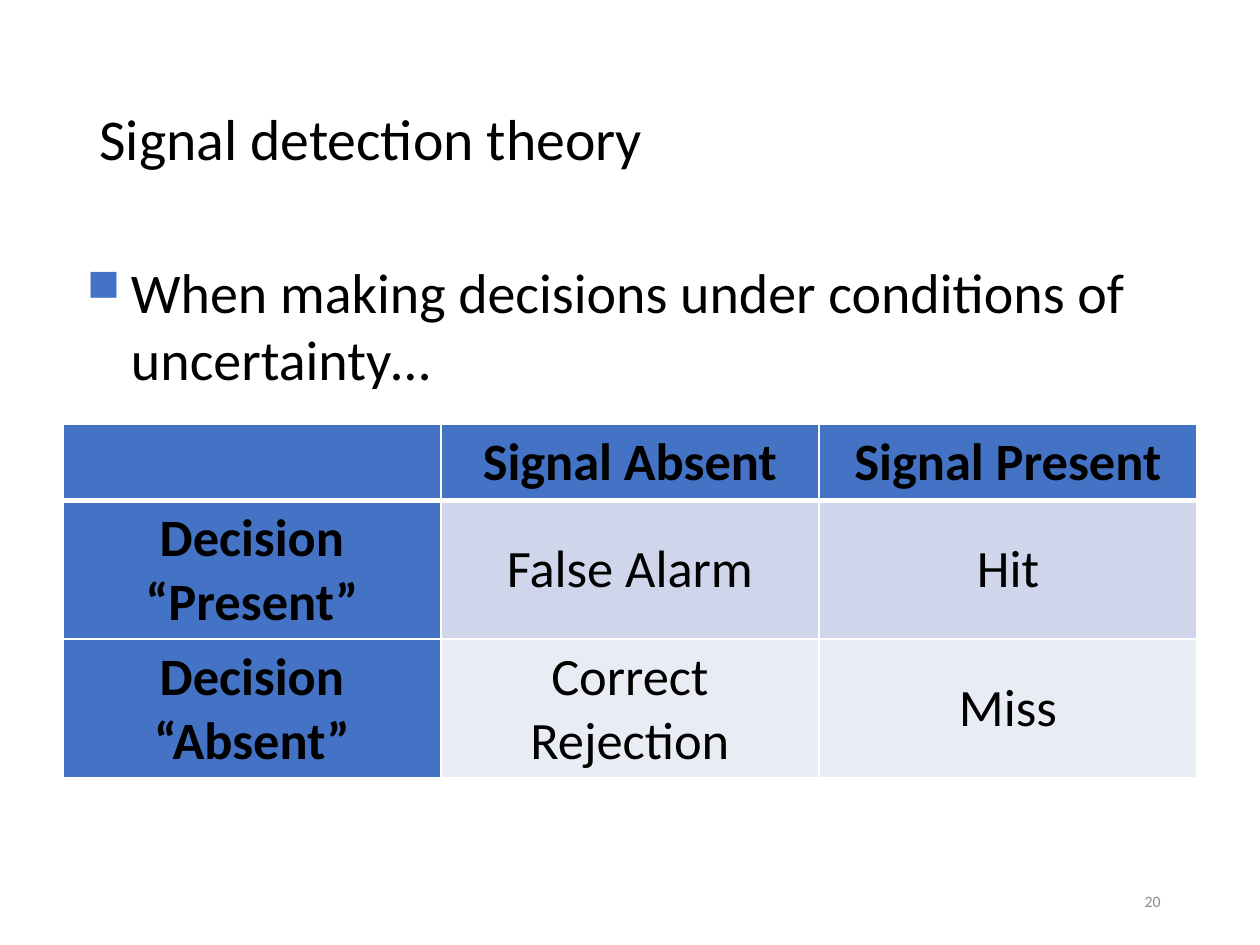
import pptx
import pptx.util
import pptx.dml.color
import pptx.enum.text
import pptx.oxml
import pptx.oxml.ns
from lxml import etree

Inches = pptx.util.Inches
Align = pptx.enum.text.PP_ALIGN
Anchor = pptx.enum.text.MSO_ANCHOR
qn = pptx.oxml.ns.qn

BLUE = "4472C4"
BANDS = ["CFD5EA", "E9EBF5"]
ROWS = [
    ["", "Signal Absent", "Signal Present"],
    ["Decision “Present”", "False Alarm", "Hit"],
    ["Decision “Absent”", "Correct Rejection", "Miss"],
]


def color(code):
    return pptx.dml.color.RGBColor.from_string(code)


def style(para, size, code="000000", bold=False, align=Align.LEFT):
    para.alignment = align
    font = para.font
    font.name = "Calibri"
    font.size = pptx.util.Pt(size)
    font.bold = bold
    font.color.rgb = color(code)


def add_text(slide, box, text, size, anchor=Anchor.MIDDLE, **look):
    frame = slide.shapes.add_textbox(*map(Inches, box)).text_frame
    frame.word_wrap = True
    frame.vertical_anchor = anchor
    para = frame.paragraphs[0]
    para.text = text
    style(para, size, **look)
    return frame


def add_bullet(para, mark, code, scale, left, hang):
    props = para._p.get_or_add_pPr()
    props.set("marL", str(Inches(left)))
    props.set("indent", str(Inches(-hang)))
    # Bullet settings come ahead of the default font
    parts = [
        f'<a:buClr {pptx.oxml.ns.nsdecls("a")}><a:srgbClr val="{code}"/></a:buClr>',
        f'<a:buSzPct {pptx.oxml.ns.nsdecls("a")} val="{scale * 1000}"/>',
        f'<a:buChar {pptx.oxml.ns.nsdecls("a")} char="{mark}"/>',
    ]
    for spot, part in enumerate(parts):
        props.insert(spot, pptx.oxml.parse_xml(part))


def add_edge(cell, side, width):
    props = cell._tc.get_or_add_tcPr()
    line = etree.SubElement(props, qn(f"a:ln{side}"), w=str(pptx.util.Pt(width)))
    fill = etree.SubElement(line, qn("a:solidFill"))
    etree.SubElement(fill, qn("a:srgbClr"), val="FFFFFF")


def add_grid(slide, box, rows, heights):
    shape = slide.shapes.add_table(len(rows), len(rows[0]), *map(Inches, box))
    table = shape.table
    for r, row in enumerate(rows):
        table.rows[r].height = Inches(heights[r])
        for c, text in enumerate(row):
            cell = table.cell(r, c)
            head = r == 0 or c == 0
            cell.text = text
            cell.vertical_anchor = Anchor.MIDDLE
            style(cell.text_frame.paragraphs[0], 30, bold=head, align=Align.CENTER)
            # A thick rule parts the header from the body
            for side in "LRTB":
                thick = (r, side) in [(0, "B"), (1, "T")]
                add_edge(cell, side, 3 if thick else 1)
            cell.fill.solid()
            cell.fill.fore_color.rgb = color(BLUE if head else BANDS[r - 1])


def main():
    deck = pptx.Presentation()
    deck.slide_width, deck.slide_height = Inches(10), Inches(7.5)
    slide = deck.slides.add_slide(deck.slide_layouts[6])

    # Title
    title = add_text(slide, (0.69, 0.4, 8.62, 1.45), "Signal detection theory", 33)
    title.paragraphs[0].line_spacing = 0.9

    # Decision table
    add_grid(slide, (0.5, 3.37, 9, 2.8), ROWS, [0.6, 1.1, 1.1])

    # Slide number
    add_text(slide, (7.06, 6.95, 2.25, 0.4), "20", 9, code="8C8C8C", align=Align.RIGHT)

    # Lead-in point
    body = add_text(slide, (0.5, 1.94, 9, 5.06),
                    "When making decisions under conditions of uncertainty…",
                    32, anchor=Anchor.TOP)
    body.margin_left, body.margin_top = Inches(0.06), Inches(0.1)
    add_bullet(body.paragraphs[0], "■", BLUE, 80, left=0.48, hang=0.35)

    deck.save("out.pptx")


if __name__ == "__main__":
    main()
